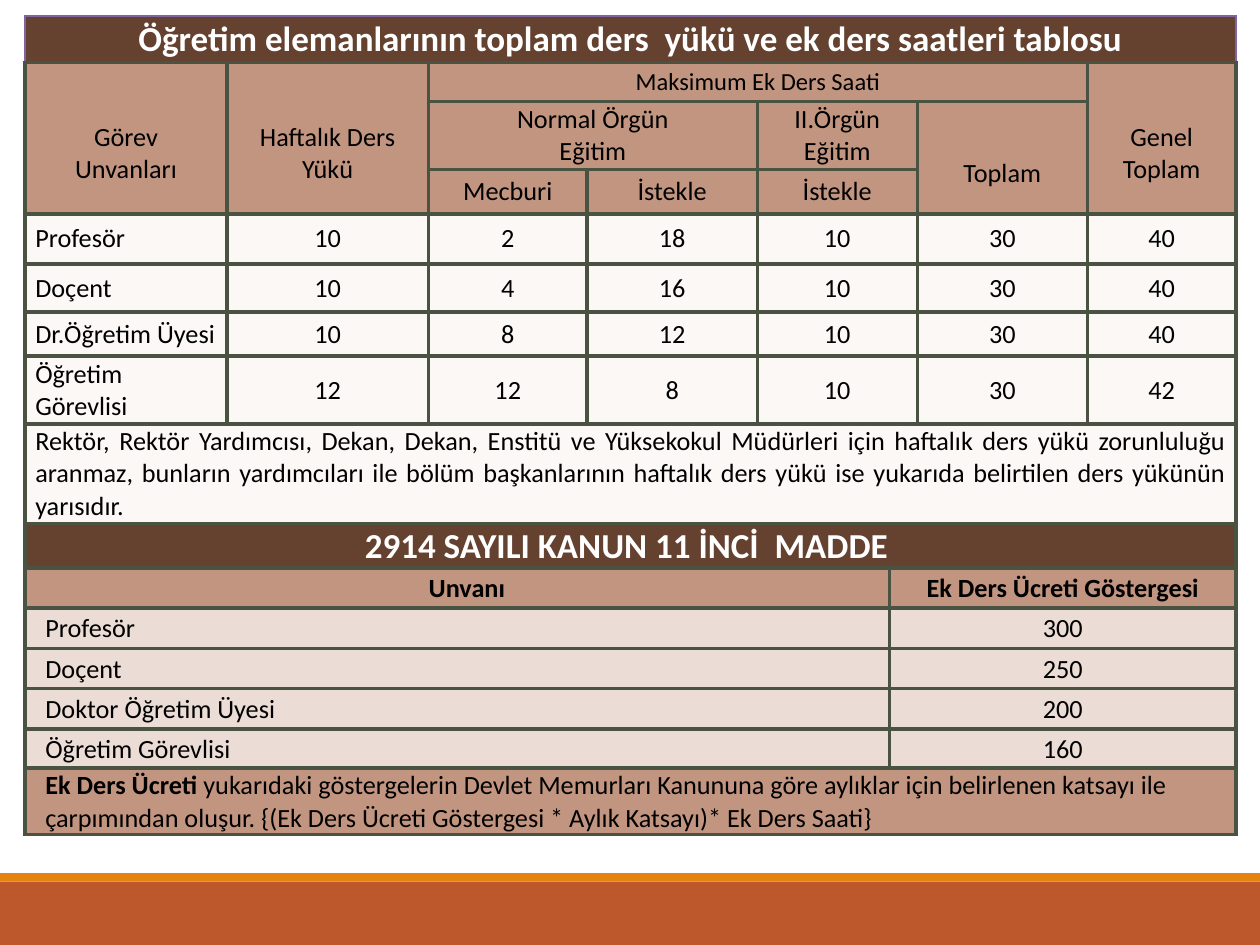
from lxml import etree
from pptx import Presentation
from pptx.dml.color import RGBColor
from pptx.enum.shapes import MSO_SHAPE
from pptx.enum.text import MSO_ANCHOR, PP_ALIGN
from pptx.oxml.ns import qn
from pptx.util import Inches, Pt

RECTANGLE = MSO_SHAPE.RECTANGLE
MIDDLE = MSO_ANCHOR.MIDDLE
LEFT, CENTER, JUSTIFY = PP_ALIGN.LEFT, PP_ALIGN.CENTER, PP_ALIGN.JUSTIFY

BLACK = RGBColor(0x00, 0x00, 0x00)
WHITE = RGBColor(0xFF, 0xFF, 0xFF)
BROWN = RGBColor(0x65, 0x41, 0x30)
TAN = RGBColor(0xC2, 0x95, 0x80)
CREAM = RGBColor(0xEB, 0xDC, 0xD5)
GREEN = RGBColor(0x4A, 0x52, 0x42)
PURPLE = RGBColor(0x80, 0x64, 0xA2)
RUST = RGBColor(0xBD, 0x58, 0x2C)
ORANGE = RGBColor(0xE4, 0x83, 0x12)

COLUMN_WIDTHS = [1.6, 1.6, 1.26, 1.35, 1.05, 0.22, 1.35, 1.18]
ROW_HEIGHTS = [0.37, 0.31, 0.54, 0.35, 0.4, 0.38, 0.35, 0.54, 0.79,
               0.35, 0.32, 0.32, 0.32, 0.32, 0.31, 0.53]
HEADER_DROP = 0.26

HEADERS = [
    (1, 0, 3, 1, "Görev\nUnvanları", {"top": HEADER_DROP}),
    (1, 1, 3, 1, "Haftalık Ders\nYükü", {"top": HEADER_DROP}),
    (1, 2, 1, 5, "Maksimum Ek Ders Saati", {"size": 14}),
    (1, 7, 3, 1, "Genel Toplam", {"top": HEADER_DROP, "left": 0.08, "right": 0.08}),
    (2, 2, 1, 2, "Normal Örgün\nEğitim", {}),
    (2, 4, 1, 2, "II.Örgün\nEğitim", {}),
    (2, 6, 2, 1, "Toplam", {"top": HEADER_DROP}),
    (3, 2, 1, 1, "Mecburi", {}),
    (3, 3, 1, 1, "İstekle", {}),
    (3, 4, 1, 2, "İstekle", {}),
]
LOADS = [
    ("Profesör", 10, 2, 18, 10, 30, 40),
    ("Doçent", 10, 4, 16, 10, 30, 40),
    ("Dr.Öğretim Üyesi", 10, 8, 12, 10, 30, 40),
    ("Öğretim Görevlisi", 12, 12, 8, 10, 30, 42),
]
LOAD_COLUMNS = [(0, 1), (1, 1), (2, 1), (3, 1), (4, 2), (6, 1), (7, 1)]
LOAD_NOTE = (
    "Rektör, Rektör Yardımcısı, Dekan, Dekan, Enstitü ve Yüksekokul Müdürleri için "
    "haftalık ders yükü zorunluluğu aranmaz, bunların yardımcıları ile bölüm "
    "başkanlarının haftalık ders yükü ise yukarıda belirtilen ders yükünün yarısıdır."
)
RATES = [("Profesör", 300), ("Doçent", 250),
         ("Doktor Öğretim Üyesi", 200), ("Öğretim Görevlisi", 160)]
RATE_NOTE = (
    " yukarıdaki göstergelerin Devlet Memurları Kanununa göre aylıklar için "
    "belirlenen katsayı ile çarpımından oluşur. "
    "{(Ek Ders Ücreti Göstergesi * Aylık Katsayı)* Ek Ders Saati}"
)


def write_text(frame, text, size=15, color=BLACK, bold=False, align=CENTER,
               font="Calibri", lead=""):
    for index, line in enumerate(text.split("\n")):
        paragraph = frame.paragraphs[0] if index == 0 else frame.add_paragraph()
        paragraph.alignment = align
        parts = [(lead, True)] if lead and index == 0 else []
        for content, heavy in parts + [(line, bold)]:
            run = paragraph.add_run()
            run.text = content
            run.font.name = font
            run.font.size = Pt(size)
            run.font.bold = heavy
            run.font.color.rgb = color


def draw_border(cell, side, color, width):
    line = etree.SubElement(cell._tc.get_or_add_tcPr(), qn(f"a:ln{side}"), w=str(Pt(width)))
    fill = etree.SubElement(line, qn("a:solidFill"))
    etree.SubElement(fill, qn("a:srgbClr"), val=str(color))


class SlideBuilder:
    def __init__(self, presentation):
        self.width = presentation.slide_width
        self.height = presentation.slide_height
        self.slide = presentation.slides.add_slide(presentation.slide_layouts[6])
        self.table = None

    def band(self, top, height, color):
        shape = self.slide.shapes.add_shape(
            RECTANGLE, 0, round(top * self.height), self.width, round(height * self.height))
        shape.shadow.inherit = False
        shape.fill.solid()
        shape.fill.fore_color.rgb = color
        shape.line.fill.background()

    def grid(self, left, top, widths, heights):
        frame = self.slide.shapes.add_table(
            len(heights), len(widths), round(left * self.width), round(top * self.height),
            Inches(sum(widths)), Inches(sum(heights)))
        self.table = frame.table
        self.table.first_row = False
        self.table.horz_banding = False
        for column, width in zip(self.table.columns, widths):
            column.width = Inches(width)
        for row, height in zip(self.table.rows, heights):
            row.height = Inches(height)

    def cell(self, row, column, rows, columns, text, fill=TAN, alpha=None, edge=(GREEN, 2.25),
             left=0.01, top=0.01, right=0.01, bottom=0.01, **text_format):
        origin = self.table.cell(row, column)
        if rows * columns > 1:
            origin.merge(self.table.cell(row + rows - 1, column + columns - 1))
        for covered_row in range(row, row + rows):
            for covered_column in range(column, column + columns):
                cell = self.table.cell(covered_row, covered_column)
                for side in "LRT":
                    draw_border(cell, side, *edge)
                draw_border(cell, "B", GREEN, 2.25)
                cell.fill.solid()
                cell.fill.fore_color.rgb = fill
                if alpha is not None:
                    color = cell._tc.tcPr.find(f"{qn('a:solidFill')}/{qn('a:srgbClr')}")
                    etree.SubElement(color, qn("a:alpha"), val=str(alpha * 1000))
        origin.vertical_anchor = MIDDLE
        origin.margin_left, origin.margin_right = Inches(left), Inches(right)
        origin.margin_top, origin.margin_bottom = Inches(top), Inches(bottom)
        write_text(origin.text_frame, text, **text_format)


def main():
    presentation = Presentation()
    presentation.slide_width = Inches(10)
    presentation.slide_height = Inches(7.5)
    builder = SlideBuilder(presentation)
    builder.band(0.933, 0.067, RUST)
    builder.band(0.924, 0.009, ORANGE)
    builder.grid(0.02, 0.017, COLUMN_WIDTHS, ROW_HEIGHTS)

    banner = {"fill": BROWN, "color": WHITE, "size": 20, "bold": True}
    pale = {"fill": CREAM, "alpha": 20}
    padded = {"left": 0.08, "right": 0.08}
    indented = {"left": 0.16, "bottom": 0}

    builder.cell(0, 0, 1, 8, "Öğretim elemanlarının toplam ders  yükü ve ek ders saatleri tablosu",
                 edge=(PURPLE, 1), **banner)
    for row, column, rows, columns, text, options in HEADERS:
        builder.cell(row, column, rows, columns, text, **options)
    for row, load in enumerate(LOADS, 4):
        for (column, columns), value in zip(LOAD_COLUMNS, load):
            options = {"align": LEFT, **padded} if column == 0 else {}
            builder.cell(row, column, 1, columns, str(value), **pale, **options)
    builder.cell(8, 0, 1, 8, LOAD_NOTE, align=JUSTIFY, **pale, **padded)

    builder.cell(9, 0, 1, 8, "2914 SAYILI KANUN 11 İNCİ  MADDE ", bottom=0, **banner)
    builder.cell(10, 0, 1, 5, "Unvanı", bold=True, **indented)
    builder.cell(10, 5, 1, 3, "Ek Ders Ücreti Göstergesi", bold=True, bottom=0)
    for row, (title, rate) in enumerate(RATES, 11):
        builder.cell(row, 0, 1, 5, title, fill=CREAM, align=LEFT, **indented)
        builder.cell(row, 5, 1, 3, str(rate), fill=CREAM, bottom=0)
    builder.cell(15, 0, 1, 8, RATE_NOTE, lead="Ek Ders Ücreti", align=LEFT, **indented)
    presentation.save("out.pptx")


if __name__ == "__main__":
    main()
